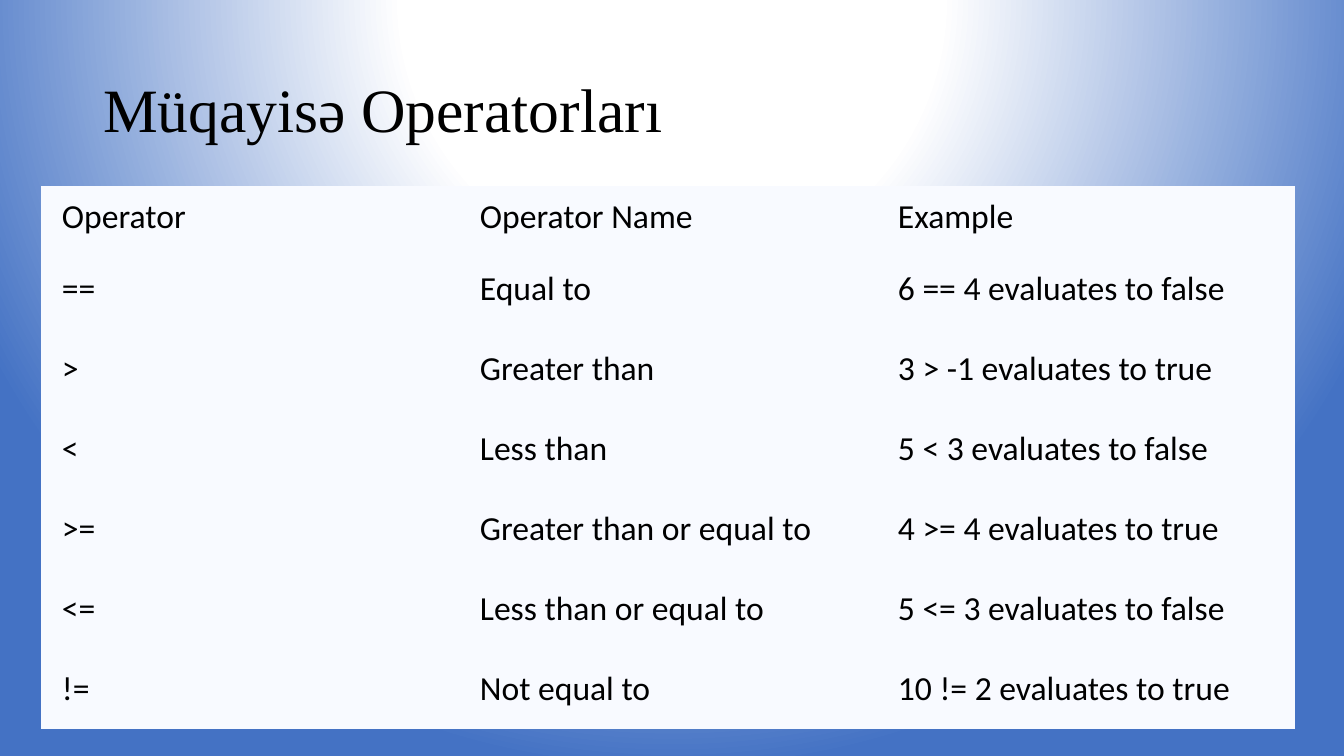
import pptx
import pptx.dml.color
import pptx.enum.text
import pptx.oxml
import pptx.oxml.ns
import pptx.util
from dataclasses import dataclass

TITLE = "Müqayisə Operatorları"
ROWS = [
    ("Operator", "Operator Name", "Example"),
    ("==", "Equal to", "6 == 4 evaluates to false"),
    (">", "Greater than", "3 > -1 evaluates to true"),
    ("<", "Less than", "5 < 3 evaluates to false"),
    (">=", "Greater than or equal to", "4 >= 4 evaluates to true"),
    ("<=", "Less than or equal to", "5 <= 3 evaluates to false"),
    ("!=", "Not equal to", "10 != 2 evaluates to true"),
]


@dataclass(frozen=True)
class Theme:
    text: str = "000000"
    cell: str = "F8FAFF"
    glow: str = "FFFFFF"
    edge: str = "4472C4"
    title_font: str = "Times New Roman"
    body_font: str = "Calibri"
    title_size: int = 44
    body_size: int = 24


THEME = Theme()
SLIDE_W, SLIDE_H = 1344, 756
TITLE_BOX = (93, 40, 1159, 146)
TABLE_LEFT, TABLE_TOP = 41, 186
COL_W, HEADER_H, ROW_H = 418, 63, 80
PAD_X, PAD_Y = 21, 11
PLAIN_TABLE = "{2D5ABB26-0587-4C30-8999-92F81FD0307C}"
GLOW_STOPS = [(0, THEME.glow), (35, THEME.glow), (100, THEME.edge)]


def px(n):
    return pptx.util.Emu(round(n * 914400 / 100.8))


def write(tf, text, font, size):
    p = tf.paragraphs[0]
    p.alignment = pptx.enum.text.PP_ALIGN.LEFT
    r = p.add_run()
    r.text = text
    r.font.name = font
    r.font.size = pptx.util.Pt(size)
    r.font.bold = False
    r.font.color.rgb = pptx.dml.color.RGBColor.from_string(THEME.text)
    return p


def paint_background(s):
    s.background.fill.gradient()
    stops = "".join(
        f'<a:gs pos="{pos * 1000}"><a:srgbClr val="{color}"/></a:gs>'
        for pos, color in GLOW_STOPS
    )
    glow = pptx.oxml.parse_xml(
        f'<a:gradFill {pptx.oxml.ns.nsdecls("a")} rotWithShape="1">'
        f'<a:gsLst>{stops}</a:gsLst><a:path path="circle">'
        '<a:fillToRect l="50000" t="-80000" r="50000" b="180000"/>'
        "</a:path></a:gradFill>"
    )
    old = s.element.find(".//" + pptx.oxml.ns.qn("a:gradFill"))
    old.getparent().replace(old, glow)


def add_title(s):
    sp = s.shapes.title
    sp.left, sp.top, sp.width, sp.height = map(px, TITLE_BOX)
    tf = sp.text_frame
    tf.vertical_anchor = pptx.enum.text.MSO_ANCHOR.MIDDLE
    p = write(tf, TITLE, THEME.title_font, THEME.title_size)
    p.line_spacing = 0.9


def add_operators(s):
    heights = [HEADER_H] + [ROW_H] * (len(ROWS) - 1)
    cols = len(ROWS[0])
    box = (TABLE_LEFT, TABLE_TOP, COL_W * cols, sum(heights))
    table = s.shapes.add_table(len(ROWS), cols, *map(px, box)).table
    table.first_row = table.horz_banding = False
    style = table._tbl.tblPr.find(pptx.oxml.ns.qn("a:tableStyleId"))
    style.text = PLAIN_TABLE
    for col in table.columns:
        col.width = px(COL_W)
    for i, (height, texts) in enumerate(zip(heights, ROWS)):
        table.rows[i].height = px(height)
        for cell, text in zip(table.rows[i].cells, texts):
            cell.margin_left = cell.margin_right = px(PAD_X)
            cell.margin_top = cell.margin_bottom = px(PAD_Y)
            cell.vertical_anchor = pptx.enum.text.MSO_ANCHOR.MIDDLE
            cell.fill.solid()
            cell.fill.fore_color.rgb = pptx.dml.color.RGBColor.from_string(THEME.cell)
            write(cell.text_frame, text, THEME.body_font, THEME.body_size)


def main():
    prs = pptx.Presentation()
    prs.slide_width, prs.slide_height = px(SLIDE_W), px(SLIDE_H)
    s = prs.slides.add_slide(prs.slide_layouts[5])
    paint_background(s)
    add_title(s)
    add_operators(s)
    prs.save("out.pptx")


if __name__ == "__main__":
    main()
